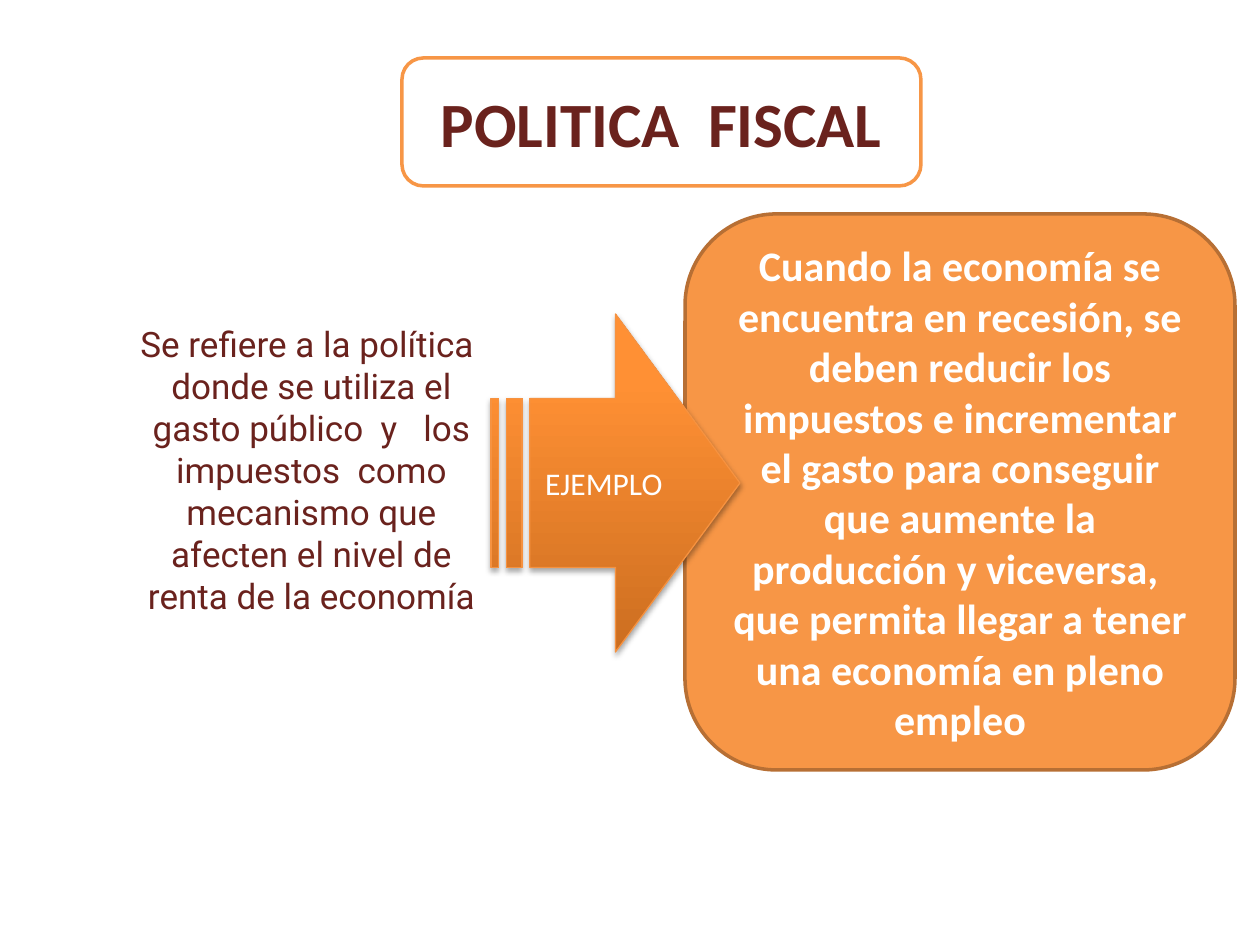
from copy import deepcopy

from lxml.etree import SubElement
from pptx import Presentation
from pptx.dml.color import RGBColor
from pptx.enum.shapes import MSO_SHAPE
from pptx.enum.text import MSO_ANCHOR, PP_ALIGN
from pptx.oxml.ns import qn
from pptx.util import Inches, Pt

PX = Inches(1) / 126
COLORS = {
    "wine": "6A221D",
    "white": "FFFFFF",
    "orange": "F79646",
    "brown": "B76F34",
    "arrow_line": "F69240",
    "arrow_dark": "CC6E20",
    "arrow_mid": "FF9034",
    "arrow_light": "FF9136",
    "shadow": "000000",
}


def color(name):
    return RGBColor.from_string(COLORS[name])


def emu(box):
    return [round(length * PX) for length in box]


def write(shape, text, *, size, ink, font="Calibri", bold=False,
          anchor=MSO_ANCHOR.MIDDLE):
    frame = shape.text_frame
    frame.word_wrap = True
    frame.vertical_anchor = anchor
    paragraph = frame.paragraphs[0]
    paragraph.alignment = PP_ALIGN.CENTER
    run = paragraph.add_run()
    run.text = text
    run.font.name = font
    run.font.size = Pt(size)
    run.font.bold = bold
    run.font.color.rgb = color(ink)


def add_panel(slide, box, text, *, fill, line, **text_format):
    panel = slide.shapes.add_shape(MSO_SHAPE.ROUNDED_RECTANGLE, *emu(box))
    panel.shadow.inherit = False
    panel.fill.solid()
    panel.fill.fore_color.rgb = color(fill)
    panel.line.color.rgb = color(line)
    panel.line.width = Pt(2)
    write(panel, text, bold=True, **text_format)


def add_definition(slide, box):
    definition = slide.shapes.add_textbox(*emu(box))
    write(definition,
          "Se refiere a la política  donde se utiliza el gasto público  y   los "
          "impuestos  como mecanismo que afecten el nivel de renta de la economía",
          size=20, ink="wine", font="Roboto", anchor=MSO_ANCHOR.TOP)


def add_title(slide, box):
    add_panel(slide, box, "POLITICA  FISCAL",
              fill="white", line="orange", size=36, ink="wine")


def add_example(slide, box):
    add_panel(slide, box,
              "Cuando la economía se encuentra en recesión, se deben reducir los "
              "impuestos e incrementar el gasto para conseguir que aumente la "
              "producción y viceversa,  que permita llegar a tener una economía "
              "en pleno empleo",
              fill="orange", line="brown", size=24, ink="white")


def add_arrow(slide, box):
    arrow = slide.shapes.add_shape(MSO_SHAPE.STRIPED_RIGHT_ARROW, *emu(box))
    arrow.line.color.rgb = color("arrow_line")
    arrow.line.width = Pt(0.75)

    # Three-stop gradient, dark at the bottom
    arrow.fill.gradient()
    arrow.fill.gradient_angle = 90
    properties = arrow._element.spPr
    stop_list = properties.find(qn("a:gradFill")).find(qn("a:gsLst"))
    stop_list.append(deepcopy(stop_list[-1]))
    stops = ((0, "arrow_dark"), (0.8, "arrow_mid"), (1, "arrow_light"))
    for stop, (position, name) in zip(arrow.fill.gradient_stops, stops):
        stop.position = position
        stop.color.rgb = color(name)

    # Soft shadow below
    arrow.shadow.inherit = False
    effects = properties.find(qn("a:effectLst"))
    shadow = SubElement(effects, qn("a:outerShdw"), blurRad="40000",
                        dist="23000", dir="5400000", rotWithShape="0")
    tint = SubElement(shadow, qn("a:srgbClr"), val=COLORS["shadow"])
    SubElement(tint, qn("a:alpha"), val="35000")

    write(arrow, "EJEMPLO", size=18, ink="white")


def main():
    presentation = Presentation()
    presentation.slide_width = Inches(10)
    presentation.slide_height = Inches(7.5)
    slide = presentation.slides.add_slide(presentation.slide_layouts[6])

    add_definition(slide, (123, 316, 377, 310))
    add_title(slide, (402, 58, 519, 128))
    add_example(slide, (685, 214, 550, 556))
    add_arrow(slide, (491, 314, 249, 338))

    presentation.save("out.pptx")


if __name__ == "__main__":
    main()
